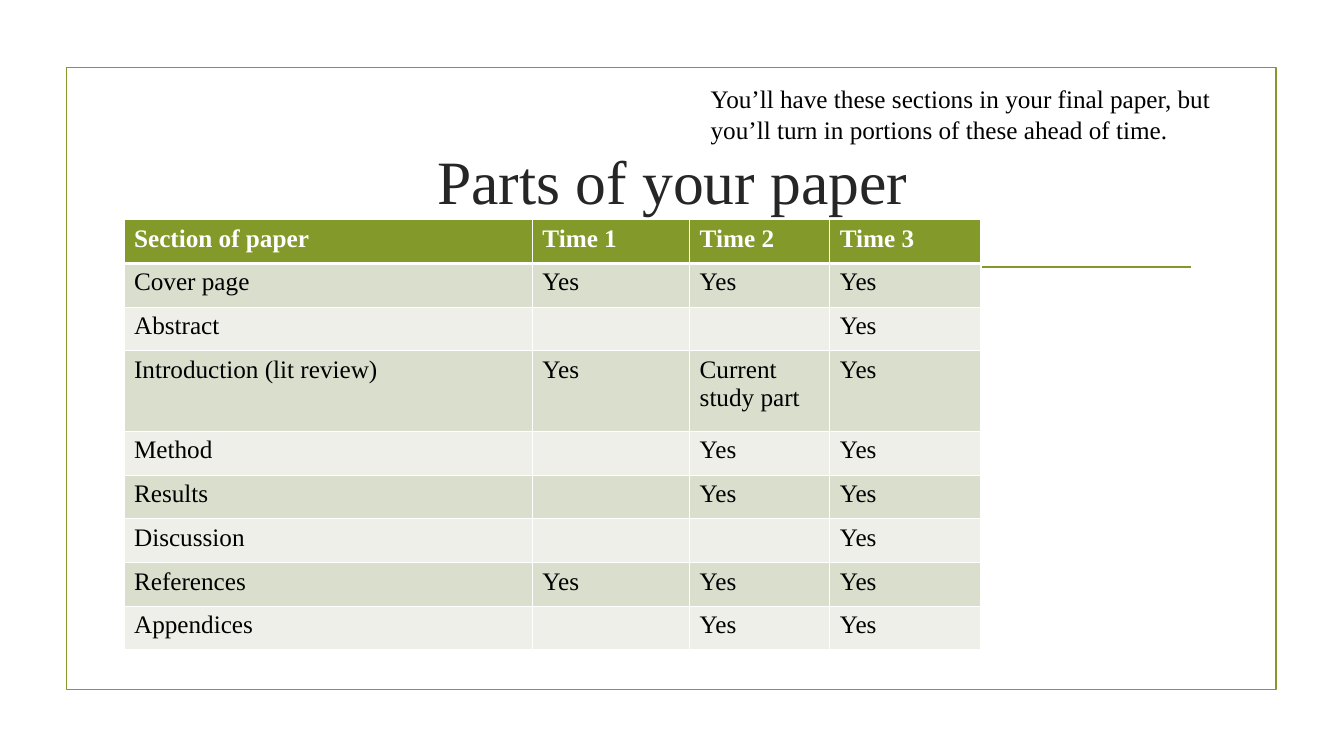
from lxml.etree import SubElement
from pptx import Presentation
from pptx.dml.color import RGBColor as RGB
from pptx.enum.shapes import MSO_CONNECTOR as Conn, MSO_SHAPE as Shape
from pptx.enum.text import MSO_ANCHOR as Anchor, PP_ALIGN as Align
from pptx.oxml.ns import qn
from pptx.util import Inches, Pt

TITLE = "Parts of your paper"
NOTE = [
    "You’ll have these sections in your final paper, but",
    "you’ll turn in portions of these ahead of time.",
]
HEAD = ("Section of paper", "Time 1", "Time 2", "Time 3")
PARTS = [
    ("Cover page", "Yes", "Yes", "Yes"),
    ("Abstract", "", "", "Yes"),
    ("Introduction (lit review)", "Yes", "Current study part", "Yes"),
    ("Method", "", "Yes", "Yes"),
    ("Results", "", "Yes", "Yes"),
    ("Discussion", "", "", "Yes"),
    ("References", "Yes", "Yes", "Yes"),
    ("Appendices", "", "Yes", "Yes"),
]
THEME = {
    "font": "Times New Roman",
    "green": "83992A", "bands": ("D9DECD", "EDEFE8"), "white": "FFFFFF",
    "ink": "000000", "dark": "262626",
    "title": 44, "body": 18, "line": 1.25, "grid": 1, "rule": 3,
}
FRAME = (0.66, 0.67, 12, 6.17)
RULE = (1.53, 2.65, 11.81, 2.65)
TITLE_BOX = (1.42, 1.07, 10.5, 1.43)
NOTE_BOX = (6.95, 0.78, 5.44, 0.71)
GRID = (1.23, 2.18, 8.5, 4.27)
COLS = (4.05, 1.56, 1.39, 1.5)
TALL_ROW, TALL = 3, 0.8


def inches(nums):
    return [Inches(n) for n in nums]


def write(frame, lines, size, color, bold=False, align=Align.LEFT):
    look = {"name": THEME["font"], "size": Pt(size), "bold": bold}
    for i, line in enumerate(lines):
        para = frame.add_paragraph() if i else frame.paragraphs[0]
        para.alignment = align
        run = para.add_run()
        run.text = line
        for key, val in look.items():
            setattr(run.font, key, val)
        run.font.color.rgb = RGB.from_string(color)


def stroke(shape):
    shape.line.color.rgb = RGB.from_string(THEME["green"])
    shape.line.width = Pt(THEME["line"])


def edge(cell, widths):
    """Draw white borders; widths maps each side to points."""
    props = cell._tc.get_or_add_tcPr()
    for side, width in widths.items():
        line = SubElement(props, qn(f"a:ln{side}"), w=str(Pt(width)))
        fill = SubElement(line, qn("a:solidFill"))
        SubElement(fill, qn("a:srgbClr"), val=THEME["white"])


def add_frame(slide):
    box = slide.shapes.add_shape(Shape.RECTANGLE, *inches(FRAME))
    box.shadow.inherit = False
    box.fill.background()
    stroke(box)
    rule = slide.shapes.add_connector(Conn.STRAIGHT, *inches(RULE))
    stroke(rule)
    SubElement(rule._element.spPr, qn("a:effectLst"))


def add_text(slide):
    title = slide.shapes.add_textbox(*inches(TITLE_BOX)).text_frame
    title.word_wrap = True
    title.vertical_anchor = Anchor.MIDDLE
    write(title, [TITLE], THEME["title"], THEME["dark"], align=Align.CENTER)
    note = slide.shapes.add_textbox(*inches(NOTE_BOX)).text_frame
    note.word_wrap = False
    write(note, NOTE, THEME["body"], THEME["ink"])


def add_grid(slide):
    rows = [HEAD, *PARTS]
    table = slide.shapes.add_table(len(rows), len(COLS), *inches(GRID)).table
    for col, width in zip(table.columns, COLS):
        col.width = Inches(width)
    short = (GRID[3] - TALL) / (len(rows) - 1)
    for r, texts in enumerate(rows):
        table.rows[r].height = Inches(TALL if r == TALL_ROW else short)
        head = r == 0
        back = THEME["green"] if head else THEME["bands"][(r - 1) % 2]
        color = THEME["white"] if head else THEME["ink"]
        widths = dict.fromkeys("LRTB", THEME["grid"])
        if head:
            widths["B"] = THEME["rule"]
        elif r == 1:
            widths["T"] = THEME["rule"]
        for c, text in enumerate(texts):
            cell = table.cell(r, c)
            edge(cell, widths)
            cell.fill.solid()
            cell.fill.fore_color.rgb = RGB.from_string(back)
            if text:
                write(cell.text_frame, [text], THEME["body"], color, head)


def main():
    deck = Presentation()
    deck.slide_width, deck.slide_height = inches((13.33, 7.5))
    slide = deck.slides.add_slide(deck.slide_layouts[6])
    add_frame(slide)
    add_text(slide)
    add_grid(slide)
    deck.save("out.pptx")


if __name__ == "__main__":
    main()
